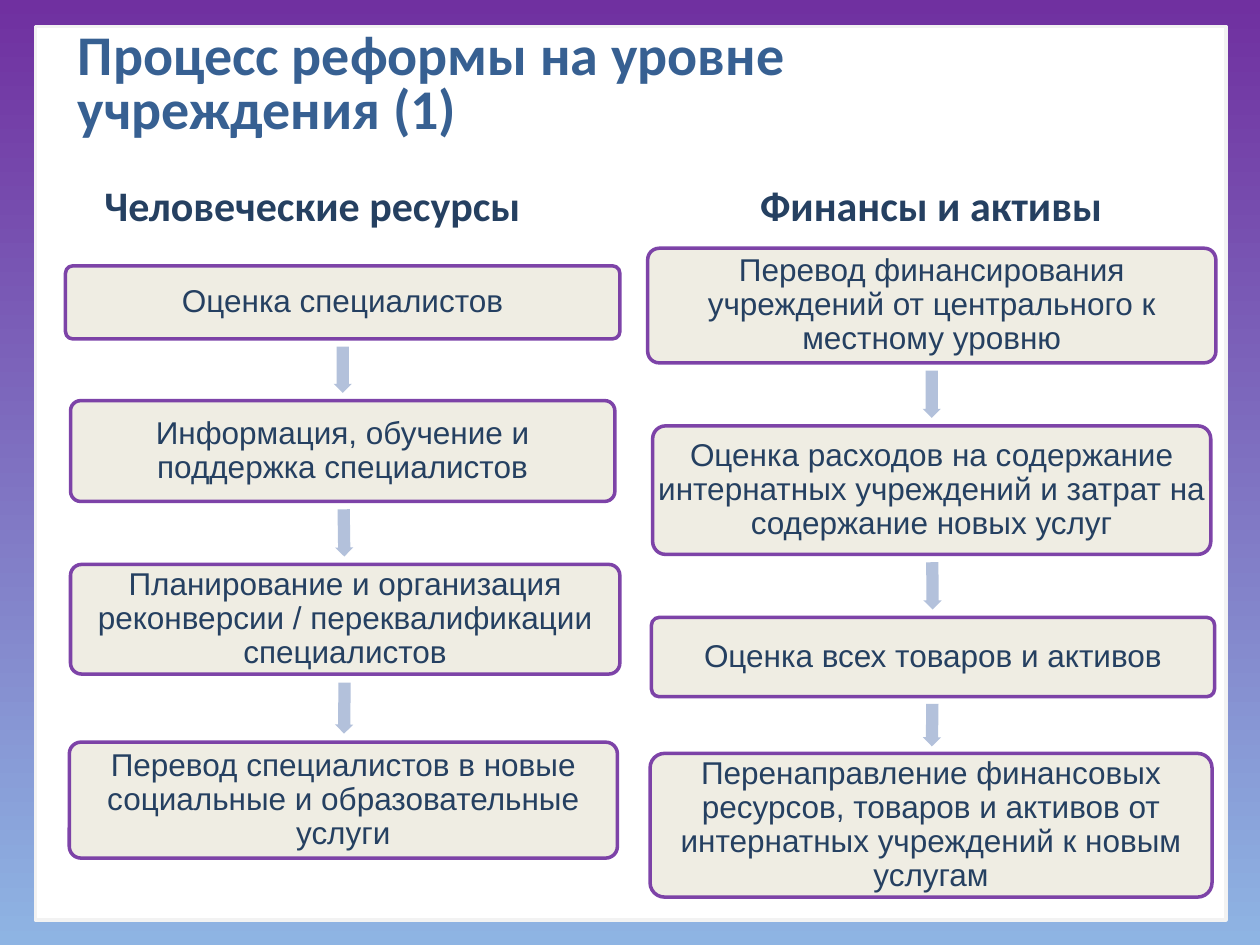
import math
from pptx import Presentation, util as u
from pptx.dml.color import RGBColor
from pptx.enum import shapes, text
from pptx.oxml import parse_xml
from pptx.oxml.ns import nsdecls

deck = Presentation()
deck.slide_width, deck.slide_height = u.Inches(10), u.Inches(7.5)
page = deck.slides.add_slide(deck.slide_layouts[6])
COLUMN, ROW = deck.slide_width / 100, deck.slide_height / 75  # grid of 100 x 75

PURPLE, BEIGE, NAVY = "7030A0", "EEECE1", "254061"
CENTER, MIDDLE = text.PP_ALIGN.CENTER, text.MSO_ANCHOR.MIDDLE


def add_block(kind, left, top, width, height, fill, line=None, opacity=100):
    """Add a filled preset shape, or a text box when kind is None."""
    area = [int(left * COLUMN), int(top * ROW), int(width * COLUMN), int(height * ROW)]
    if kind is None:
        return page.shapes.add_textbox(*area)
    box = page.shapes.add_shape(kind, *area)
    box.shadow.inherit = False
    box.fill.solid()
    box.fill.fore_color.rgb = RGBColor.from_string(fill)
    if line:
        box.line.color.rgb = RGBColor.from_string(line)
        box.line.width = u.Pt(2)
    else:
        box.line.fill.background()
    if opacity < 100:
        for color in box._element.spPr.iter("{*}srgbClr"):
            color.append(parse_xml(f'<a:alpha {nsdecls("a")} val="{opacity * 1000}"/>'))
    return box


def write(box, words, font, size, color, bold=False, align=CENTER, anchor=MIDDLE, spacing=1.0):
    frame = box.text_frame
    frame.word_wrap = True
    frame.vertical_anchor = anchor
    frame.text = words
    para = frame.paragraphs[0]
    para.alignment, para.line_spacing = align, spacing
    for span in para.runs:
        span.font.name, span.font.size, span.font.bold = font, u.Pt(size), bold
        span.font.color.rgb = RGBColor.from_string(color)


# Background and white panel
backdrop = page.background.fill
backdrop.gradient()
backdrop.gradient_angle = 270
for stop, (position, color) in zip(backdrop.gradient_stops, [(0, PURPLE), (1, "8EB4E3")]):
    stop.position = position
    stop.color.rgb = RGBColor.from_string(color)
add_block(shapes.MSO_SHAPE.RECTANGLE, 2.8, 2.1, 94.5, 70.9, "FFFFFF", "F2F2F2")

title = add_block(None, 5.2, 2.1, 93.7, 9, None)
write(title, "Процесс реформы на уровне\vучреждения (1)", "Calibri", 32, "376092", True,
      text.PP_ALIGN.LEFT, text.MSO_ANCHOR.TOP, 0.8)

# Each flow: heading, its left and width, then steps as (left, top, width, height, words)
flows = [
    ("Человеческие ресурсы", 5.2, 39.2, [
        (5.2, 21.1, 44, 5.8, "Оценка специалистов"),
        (5.6, 31.8, 43.2, 8, "Информация, обучение и поддержка специалистов"),
        (5.6, 44.8, 43.6, 8.7,
         "Планирование и организация реконверсии / переквалификации специалистов"),
        (5.5, 58.9, 43.5, 9.2,
         "Перевод специалистов в новые социальные и образовательные услуги"),
    ]),
    ("Финансы и активы", 55.4, 37, [
        (51.4, 19.7, 45.1, 9.1, "Перевод финансирования учреждений от центрального к местному уровню"),
        (51.8, 33.8, 44.3, 10.2,
         "Оценка расходов на содержание интернатных учреждений и затрат на содержание новых услуг"),
        (51.7, 49, 44.7, 6.3, "Оценка всех товаров и активов"),
        (51.6, 59.8, 44.6, 11.4,
         "Перенаправление финансовых ресурсов, товаров и активов "
         "от интернатных учреждений к новым услугам"),
    ]),
]

for heading, heading_left, heading_width, steps in flows:
    write(add_block(None, heading_left, 12.7, heading_width, 7.1, None),
          heading, "Calibri", 24, NAVY, True)

    for left, top, width, height, words in steps:
        box = add_block(shapes.MSO_SHAPE.ROUNDED_RECTANGLE, left, top, width, height,
                        BEIGE, PURPLE, 90)
        box.adjustments[0] = 0.1
        frame = box.text_frame
        frame.margin_left = frame.margin_right = frame.margin_top = frame.margin_bottom = 0
        write(box, words, "Arial", 18, NAVY, spacing=0.9)

    # An arrow fills three quarters of each gap and points from box centre to box centre
    for (left, top, width, height, _), (left2, top2, width2, height2, _) in zip(steps, steps[1:]):
        x, x2 = left + width / 2, left2 + width2 / 2
        y, y2 = top + height / 2, top2 + height2 / 2
        length, thickness = 0.75 * (top2 - top - height), 1.45
        middle = (top + height + top2) / 2
        arrow = add_block(shapes.MSO_SHAPE.RIGHT_ARROW, (x + x2 - length) / 2,
                          middle - thickness / 2, length, thickness, "B3C1DB")
        arrow.adjustments[0], arrow.adjustments[1] = 0.67, 0.5
        arrow.rotation = math.degrees(math.atan2(y2 - y, x2 - x))

deck.save("out.pptx")
